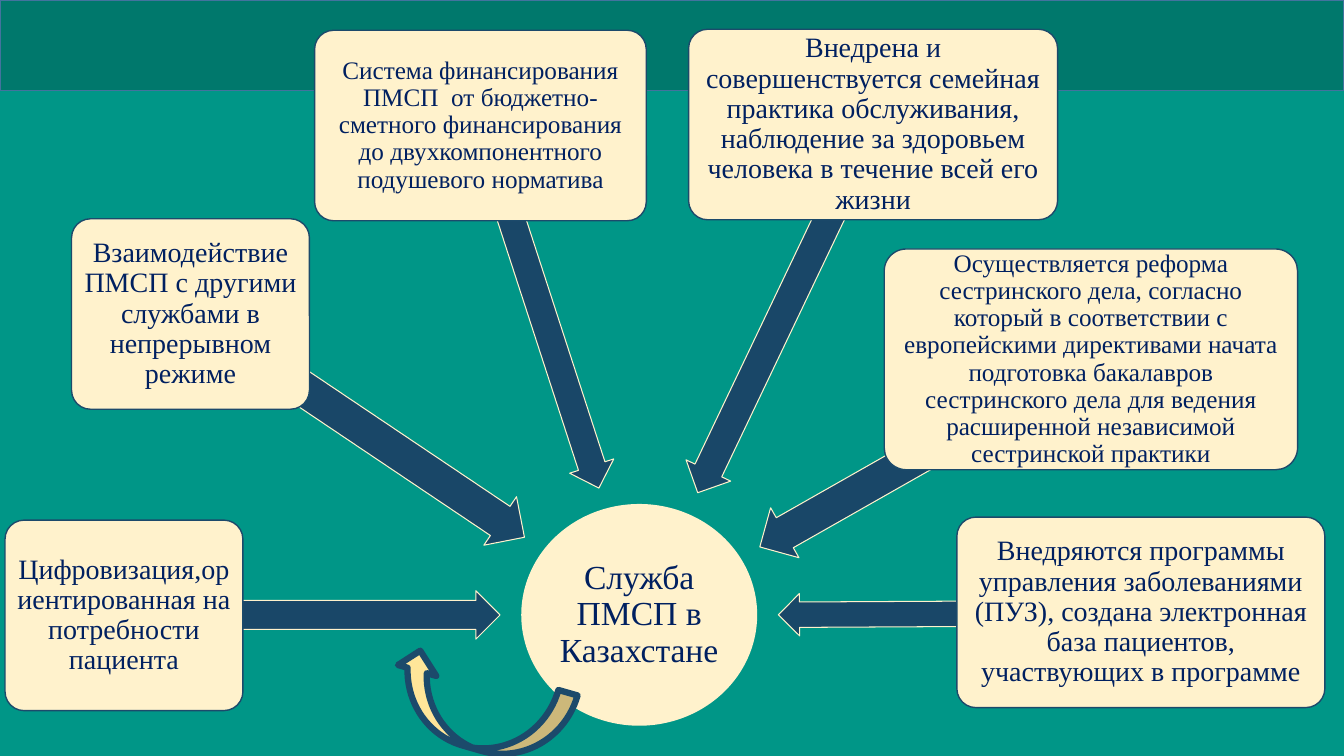
from pptx import Presentation
from pptx.dml.color import RGBColor
from pptx.enum.shapes import MSO_SHAPE
from pptx.enum.text import MSO_ANCHOR, PP_ALIGN
from pptx.util import Inches, Pt

COLORS = {
    "background": "009687",
    "band": "00786C",
    "band_line": "43739E",
    "cream": "FFF2CC",
    "arrow": "194768",
    "outline": "1C4A6B",
    "curved_arrow": "FFE699",
    "text": "002060",
}

# Each topic: text, font size, box (left, top, width, height),
# arrow (left, top, width, height), arrow rotation
TOPICS = [
    ("Цифровизация,ориентированная на потребности пациента", 20,
     (0.05, 5.16, 2.36, 1.89), (1.23, 5.86, 3.73, 0.48), 180),
    ("Взаимодействие ПМСП с другими службами в непрерывном режиме", 20,
     (0.71, 2.17, 2.36, 1.89), (1.56, 3.93, 3.98, 0.58), 213.9),
    ("Система финансирования ПМСП  от бюджетно-сметного финансирования "
     "до двухкомпонентного подушевого норматива", 18,
     (3.12, 0.3, 3.29, 1.89), (3.46, 2.81, 3.79, 0.46), 252),
    ("Внедрена и совершенствуется семейная практика обслуживания, "
     "наблюдение за здоровьем человека в течение всей его жизни", 20,
     (6.83, 0.29, 3.66, 1.89), (5.77, 2.82, 4.04, 0.49), 295.5),
    ("Осуществляется реформа сестринского дела, согласно который в соответствии "
     "с европейскими директивами начата подготовка бакалавров сестринского дела "
     "для ведения расширенной независимой сестринской практики", 18,
     (8.77, 2.47, 4.1, 2.19), (7.29, 4.21, 3.77, 0.57), 330.4),
    ("Внедряются программы управления заболеваниями (ПУЗ), создана электронная "
     "база пациентов, участвующих в программе", 20,
     (9.49, 5.13, 3.65, 1.89), (7.72, 5.88, 3.59, 0.42), 359.7),
]


def color(name):
    return RGBColor.from_string(COLORS[name])


class Diagram:
    font = "Times New Roman"

    def __init__(self, page):
        self.page = page
        page.background.fill.solid()
        page.background.fill.fore_color.rgb = color("background")

    def shape(self, kind, place, fill, line=None, line_width=1, rotation=0):
        shape = self.page.shapes.add_shape(kind, *map(Inches, place))
        shape.shadow.inherit = False
        shape.rotation = rotation
        shape.fill.solid()
        shape.fill.fore_color.rgb = color(fill)
        if line:
            shape.line.color.rgb = color(line)
            shape.line.width = Pt(line_width)
        else:
            shape.line.fill.background()
        return shape

    def label(self, shape, text, size, inset):
        frame = shape.text_frame
        frame.text = text
        frame.word_wrap = True
        frame.vertical_anchor = MSO_ANCHOR.MIDDLE
        frame.margin_left = frame.margin_right = Inches(inset)
        frame.margin_top = frame.margin_bottom = Inches(inset)
        para = frame.paragraphs[0]
        para.alignment = PP_ALIGN.CENTER
        para.line_spacing = 0.9
        span = para.runs[0]
        span.font.name = self.font
        span.font.size = Pt(size)
        span.font.color.rgb = color("text")

    def hub(self, text, place):
        circle = self.shape(MSO_SHAPE.OVAL, place, "cream")
        self.label(circle, text, 24, 0.02)

    def arrow(self, place, rotation):
        arrow = self.shape(MSO_SHAPE.LEFT_ARROW, place, "arrow", "cream", 0.75, rotation)
        arrow.adjustments[0] = 0.6
        arrow.adjustments[1] = 0.5

    def topic_box(self, text, size, place):
        box = self.shape(MSO_SHAPE.ROUNDED_RECTANGLE, place, "cream", "outline")
        box.adjustments[0] = 0.1
        self.label(box, text, size, 0.04)


def main():
    deck = Presentation()
    deck.slide_width = Inches(13.33)
    deck.slide_height = Inches(7.5)
    diagram = Diagram(deck.slides.add_slide(deck.slide_layouts[6]))

    diagram.shape(MSO_SHAPE.RECTANGLE, (0, 0, 13.33, 0.9), "band", "band_line")
    diagram.hub("Служба ПМСП в Казахстане", (5.17, 5, 2.34, 2.2))
    for text, size, box_place, arrow_place, rotation in TOPICS:
        diagram.arrow(arrow_place, rotation)
        diagram.topic_box(text, size, box_place)
    diagram.shape(MSO_SHAPE.CURVED_LEFT_ARROW, (4.35, 6.12, 0.79, 1.82),
                  "curved_arrow", "outline", 4.5, 105.9)

    deck.save("out.pptx")


if __name__ == "__main__":
    main()
